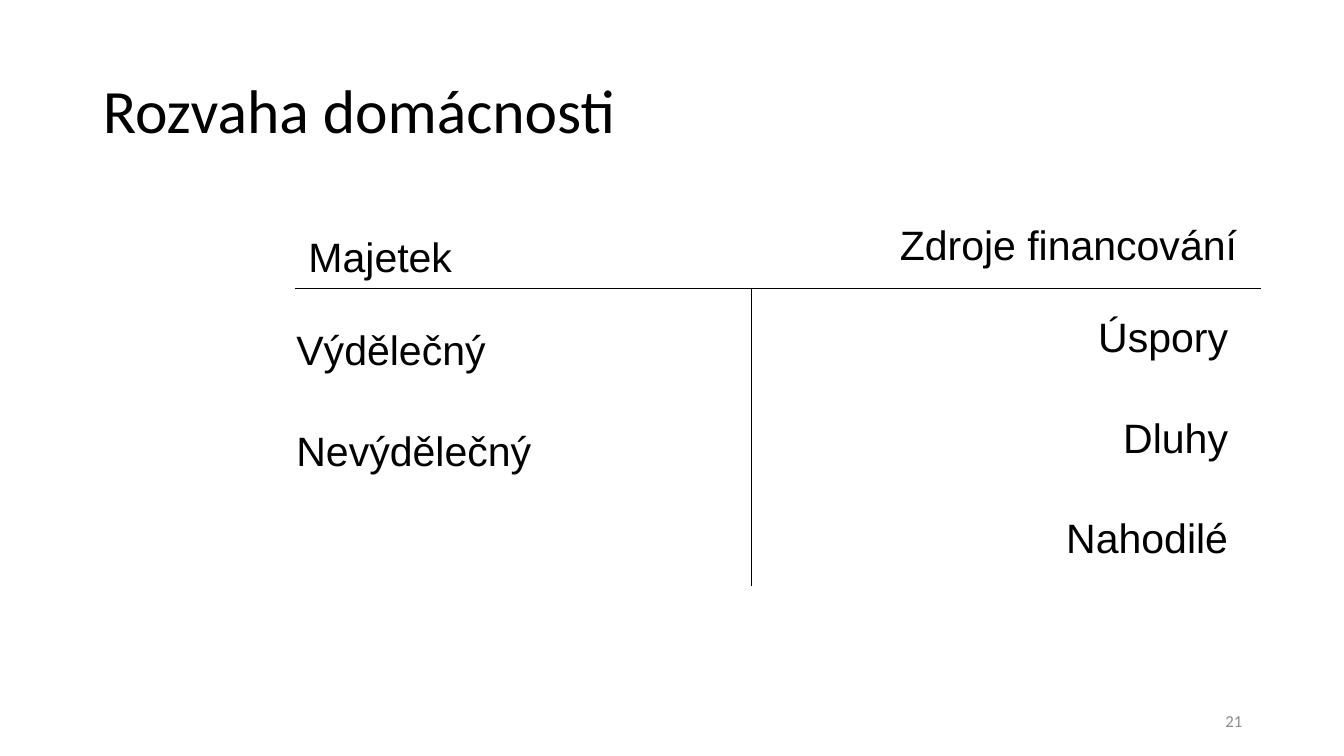
from pptx import Presentation
from pptx.dml.color import RGBColor
from pptx.enum.shapes import MSO_CONNECTOR
from pptx.enum.text import MSO_ANCHOR, MSO_AUTO_SIZE, PP_ALIGN
from pptx.oxml.ns import qn
from pptx.util import Inches, Pt
from lxml.etree import SubElement

COLORS = {"ink": "000000", "number": "8C8C8C"}
WIDTH, HEIGHT = 13.33, 7.5

# Axes of the T-account, in inches
LEFT, MIDDLE, RIGHT = 2.93, 7.45, 12.51
RULE, BOTTOM = 2.86, 5.81
ENTRY_SIZE = 29.3
ENTRY_GAP = 36.7


def write(tf, lines, font="Arial", size=ENTRY_SIZE, color="ink",
          align=PP_ALIGN.LEFT, anchor=MSO_ANCHOR.TOP, gap=0, spacing=1.0):
    """Fill a text frame with one formatted paragraph per line."""
    tf.word_wrap = True
    tf.auto_size = MSO_AUTO_SIZE.NONE
    tf.vertical_anchor = anchor
    for i, line in enumerate(lines):
        p = tf.paragraphs[0] if i == 0 else tf.add_paragraph()
        p.alignment = align
        p.line_spacing = spacing
        p.space_before = Pt(gap if i else 0)
        r = p.add_run()
        r.text = line
        r.font.name = font
        r.font.size = Pt(size)
        r.font.color.rgb = RGBColor.from_string(COLORS[color])


def add_text(s, box, lines, insets=(0.13, 0.07), **fmt):
    sp = s.shapes.add_textbox(*(Inches(v) for v in box))
    tf = sp.text_frame
    tf.margin_left = tf.margin_right = Inches(insets[0])
    tf.margin_top = tf.margin_bottom = Inches(insets[1])
    write(tf, lines, **fmt)


def add_line(s, x1, y1, x2, y2):
    line = s.shapes.add_connector(
        MSO_CONNECTOR.STRAIGHT, *(Inches(v) for v in (x1, y1, x2, y2)))
    line.line.color.rgb = RGBColor.from_string(COLORS["ink"])
    line.line.width = Pt(0.75)
    SubElement(line._element.spPr, qn("a:effectLst"))


def add_title(s, text):
    sp = s.shapes.title
    sp.left, sp.top = Inches(0.92), Inches(0.4)
    sp.width, sp.height = Inches(11.5), Inches(1.45)
    write(sp.text_frame, [text], font="Calibri", size=44,
          anchor=MSO_ANCHOR.MIDDLE, spacing=0.9)


def main():
    prs = Presentation()
    prs.slide_width, prs.slide_height = Inches(WIDTH), Inches(HEIGHT)
    s = prs.slides.add_slide(prs.slide_layouts[5])

    add_title(s, "Rozvaha domácnosti")

    # Slide number
    add_text(s, (9.42, 6.95, 3, 0.4), ["21"], insets=(0.1, 0.05),
             font="Calibri", size=12, color="number",
             align=PP_ALIGN.RIGHT, anchor=MSO_ANCHOR.MIDDLE)

    # T-account lines
    add_line(s, LEFT, RULE, RIGHT, RULE)
    add_line(s, MIDDLE, RULE, MIDDLE, BOTTOM)

    # Column headings
    add_text(s, (MIDDLE, 2.11, 4.95, 0.63), ["Zdroje financování"],
             align=PP_ALIGN.RIGHT)
    add_text(s, (LEFT, 2.23, 2, 0.63), ["Majetek"], align=PP_ALIGN.JUSTIFY)

    # Column entries
    add_text(s, (2.81, 3.15, 4.28, 2.1), ["Výdělečný", "Nevýdělečný"],
             align=PP_ALIGN.JUSTIFY, gap=ENTRY_GAP)
    add_text(s, (8.03, 3.02, 4.28, 2.57), ["Úspory", "Dluhy", "Nahodilé"],
             align=PP_ALIGN.RIGHT, gap=ENTRY_GAP)

    prs.save("out.pptx")


if __name__ == "__main__":
    main()
